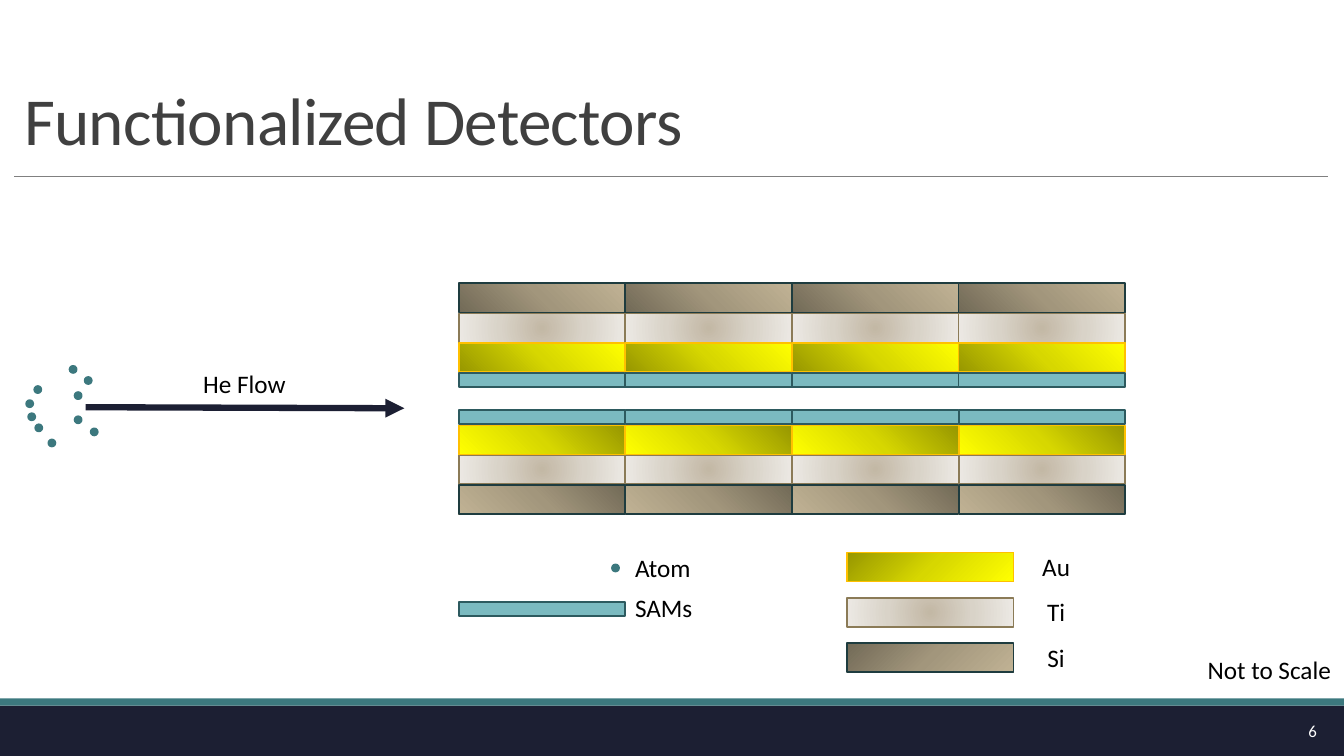
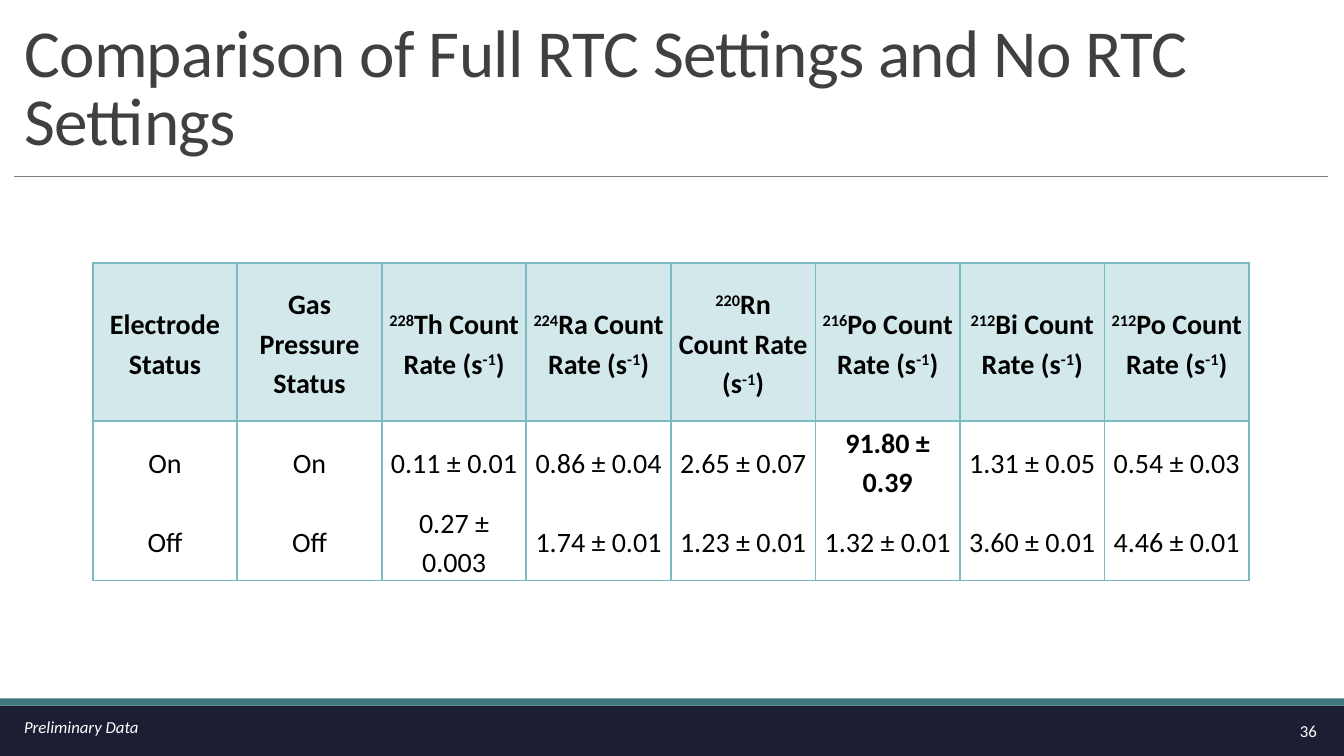
from pptx import Presentation
from pptx.dml.color import RGBColor as RGB
from pptx.enum.shapes import MSO_CONNECTOR as Conn, MSO_SHAPE as Geom
from pptx.enum.text import MSO_ANCHOR as Anchor, MSO_AUTO_SIZE as Auto, PP_ALIGN as Align
from pptx.oxml import parse_xml
from pptx.oxml.ns import nsdecls
from pptx.util import Inches, Pt

FONT = "Calibri"
COLORS = {
    "navy": "1C1F33", "teal": "3C787E", "rule": "808080", "title": "404040",
    "black": "000000", "white": "FFFFFF", "edge": "7BBAC0", "head": "D3E8EA",
}

# Each material: gradient stops (one colour means solid), line colour, height
MATTER = {
    "Ti": (("C3B8A5", "D9D3C8", "ECE9E4"), "8B7B57", 0.29),
    "Au": (("979700", "D7D700", "FFFF00"), "FFC000", 0.29),
    "Si": (("726A57", "A2967C", "C0B294"), "1E3C3F", 0.29),
    "SAMs": (("7BBAC0",), "2D5A5F", 0.14),
}
LAYERS = [("Ti", 3.11), ("Au", 3.4), ("Si", 2.81), ("SAMs", 3.7)]
STACK_X, STACK_W, STACK_N = 4.55, 6.61, 4
MIRROR = 7.91  # sum of an upper layer's top and its mirrored bottom
TILE_W = STACK_W / STACK_N

DOT = 0.07
ATOMS = [
    (0.74, 3.89), (0.74, 4.13), (0.35, 4.21), (0.28, 4.1), (0.26, 3.97),
    (0.34, 3.83), (0.48, 4.36), (0.84, 3.74), (0.9, 4.25), (0.69, 3.63),
]
METALS = ["Au", "Ti", "Si"]

HEADS = ["Electrode Status", "Gas Pressure Status"] + [
    f"^{mass}^{name} Count Rate (s^-1^)" for mass, name in [
        (228, "Th"), (224, "Ra"), (220, "Rn"), (216, "Po"), (212, "Bi"), (212, "Po")]
]
ROWS = [
    HEADS,
    ["On", "On", "0.11 ± 0.01", "0.86 ± 0.04", "2.65 ± 0.07",
     "91.80 ± 0.39", "1.31 ± 0.05", "0.54 ± 0.03"],
    ["Off", "Off", "0.27 ± 0.003", "1.74 ± 0.01", "1.23 ± 0.01",
     "1.32 ± 0.01", "3.60 ± 0.01", "4.46 ± 0.01"],
]
HEIGHTS = [1.57, 0.79, 0.79]
TABLE = (0.92, 2.61, 11.47, sum(HEIGHTS))
BOLD = {(1, 5)}


def color(name):
    return RGB.from_string(COLORS.get(name, name))


def inches(*vals):
    return [Inches(v) for v in vals]


def style(run, size, tint="black", bold=False, italic=False):
    font = run.font
    font.name, font.size = FONT, Pt(size)
    font.bold, font.italic = bold, italic
    font.color.rgb = color(tint)


def add_text(slide, words, box, size=18, tint="black", align=Align.LEFT,
             anchor=Anchor.TOP, italic=False):
    frame = slide.shapes.add_textbox(*inches(*box)).text_frame
    frame.word_wrap = True
    frame.vertical_anchor = anchor
    frame.text = words
    para = frame.paragraphs[0]
    para.alignment = align
    style(para.runs[0], size, tint, italic=italic)
    return frame


def gradient(stops):
    """Radial for titanium, whose light stop lies outside; else 45 degrees."""
    marks = "".join(
        f'<a:gs pos="{i * 50000}"><a:srgbClr val="{c}"/></a:gs>'
        for i, c in enumerate(stops))
    if stops == MATTER["Ti"][0]:
        way = ('<a:path path="circle"><a:fillToRect l="50000" t="50000" '
               'r="50000" b="50000"/></a:path>')
    else:
        way = '<a:lin ang="2700000" scaled="1"/>'
    return parse_xml(f'<a:gradFill {nsdecls("a")} rotWithShape="1">'
                     f'<a:gsLst>{marks}</a:gsLst>{way}</a:gradFill>')


def add_shape(slide, geom, box, fill, line=None):
    shape = slide.shapes.add_shape(geom, *inches(*box))
    if len(fill) == 3:
        shape.element.spPr.append(gradient(fill))
    else:
        shape.fill.solid()
        shape.fill.fore_color.rgb = color(fill[0])
    if line:
        shape.line.color.rgb = color(line)
        shape.line.width = Pt(1.25)
    else:
        shape.line.fill.background()
    shape.shadow.inherit = False
    return shape


def add_line(slide, start, end, tint, width, arrow=False):
    line = slide.shapes.add_connector(Conn.STRAIGHT, *inches(*start, *end))
    line.line.color.rgb = color(tint)
    line.line.width = Pt(width)
    if arrow:
        line.line._get_or_add_ln().append(
            parse_xml(f'<a:tailEnd {nsdecls("a")} type="triangle"/>'))
    line.element.spPr.append(parse_xml(f'<a:effectLst {nsdecls("a")}/>'))
    return line


def add_tile(slide, name, x, y):
    fill, line, high = MATTER[name]
    return add_shape(slide, Geom.RECTANGLE, (x, y, TILE_W, high), fill, line)


def add_atom(slide, x, y):
    add_shape(slide, Geom.OVAL, (x, y, DOT, DOT), ["teal"], "teal")


def set_layout(layout, slide):
    """Place the title and move the bands and rule into the layout."""
    title = next(p for p in layout.placeholders if p.placeholder_format.idx == 0)
    title.left, title.top, title.width, title.height = inches(0.14, 0.09, 13.03, 1.54)
    parts = [
        add_shape(slide, Geom.RECTANGLE, (0, 7, 13.33, 0.5), ["navy"]),
        add_shape(slide, Geom.RECTANGLE, (0, 6.93, 13.33, 0.07), ["teal"]),
        add_line(slide, (0.14, 1.75), (13.17, 1.75), "rule", 0.5),
    ]
    for part in parts:
        layout.shapes.element.append(part.element)


def add_page(deck, layout, words, number):
    slide = deck.slides.add_slide(layout)
    frame = slide.shapes.title.text_frame
    frame.text = words
    frame.auto_size = Auto.NONE
    frame.vertical_anchor = Anchor.BOTTOM
    para = frame.paragraphs[0]
    para.alignment, para.line_spacing = Align.LEFT, 0.85
    style(para.runs[0], 48, "title")
    para.runs[0]._r.get_or_add_rPr().set("spc", "-50")
    add_text(slide, number, (11.73, 7.05, 1.43, 0.4), 12, "white",
             Align.RIGHT, Anchor.MIDDLE)
    return slide


def draw_flow(slide):
    add_line(slide, (0.85, 4.04), (4.01, 4.05), "navy", 4.5, arrow=True)
    add_text(slide, "He Flow", (1.02, 3.61, 2.81, 0.4), align=Align.CENTER)
    for spot in ATOMS:
        add_atom(slide, *spot)


def draw_stacks(slide):
    for lower in (False, True):
        for col in range(STACK_N):
            for name, top in LAYERS:
                y = MIRROR - top - MATTER[name][2] if lower else top
                tile = add_tile(slide, name, STACK_X + col * TILE_W, y)
                tile.element.spPr.xfrm.set("flipV", "1")
                tile.rotation = 180 if lower else 0


def draw_legend(slide):
    add_atom(slide, 6.07, 5.6)
    add_text(slide, "Atom", (6.2, 5.43, 2.3, 0.4))
    add_tile(slide, "SAMs", STACK_X, 5.97)
    add_text(slide, "SAMs", (6.2, 5.83, 2.3, 0.4))
    for i, name in enumerate(METALS):
        y = 5.48 + 0.45 * i
        add_tile(slide, name, 8.4, y)
        add_text(slide, name, (10.06, y - 0.06, 0.83, 0.4), align=Align.CENTER)
    note = add_text(slide, "Not to Scale", (11.88, 6.44, 1.45, 0.4))
    note.margin_right = 0


def set_borders(cell, bare):
    """Draw all four edges, save the one named in bare."""
    props = cell._tc.get_or_add_tcPr()
    for i, side in enumerate("LRTB"):
        paint = ("<a:noFill/>" if side == bare else
                 f'<a:solidFill><a:srgbClr val="{COLORS["edge"]}"/></a:solidFill>')
        props.insert(i, parse_xml(
            f'<a:ln{side} {nsdecls("a")} w="{Pt(1.5)}">{paint}</a:ln{side}>'))


def fill_cell(cell, words, bold):
    """Write words; parts between carets become superscripts."""
    cell.vertical_anchor = Anchor.MIDDLE
    cell.margin_left = cell.margin_right = Inches(0.07)
    cell.margin_top = cell.margin_bottom = 0
    para = cell.text_frame.paragraphs[0]
    para.alignment, para.line_spacing = Align.CENTER, 1.15
    for i, part in enumerate(words.split("^")):
        if part:
            run = para.add_run()
            run.text = part
            style(run, 20, bold=bold)
            if i % 2:
                run._r.get_or_add_rPr().set("baseline", "30000")


def draw_table(slide):
    table = slide.shapes.add_table(len(ROWS), len(HEADS), *inches(*TABLE)).table
    table.first_row = table.horz_banding = False
    for col in table.columns:
        col.width = Inches(TABLE[2] / len(HEADS))
    for r, row in enumerate(ROWS):
        table.rows[r].height = Inches(HEIGHTS[r])
        for c, words in enumerate(row):
            cell = table.cell(r, c)
            fill_cell(cell, words, r == 0 or (r, c) in BOLD)
            if r == 0:
                cell.fill.solid()
                cell.fill.fore_color.rgb = color("head")
            else:
                cell.fill.background()
            set_borders(cell, ("", "B", "T")[r])


def main():
    deck = Presentation()
    deck.slide_width, deck.slide_height = inches(13.33, 7.5)
    layout = deck.slide_layouts.get_by_name("Title Only")

    slide = add_page(deck, layout, "Functionalized Detectors", "6")
    set_layout(layout, slide)
    draw_flow(slide)
    draw_stacks(slide)
    draw_legend(slide)

    slide = add_page(deck, layout,
                     "Comparison of Full RTC Settings and No RTC Settings", "36")
    draw_table(slide)
    add_text(slide, "Preliminary Data", (0.14, 7.06, 1.93, 0.3), 12, "white", italic=True)
    deck.save("out.pptx")


if __name__ == "__main__":
    main()
